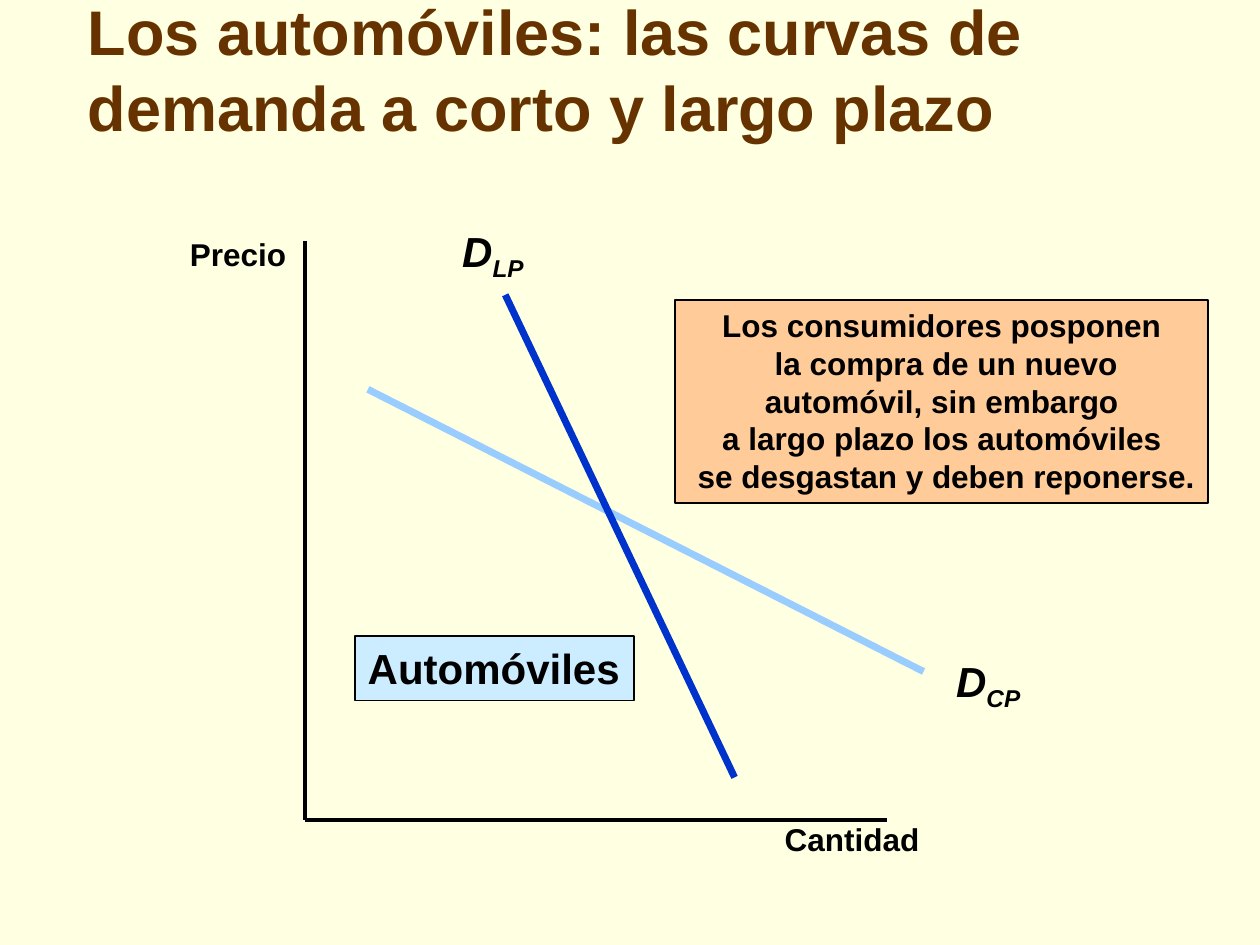
import dataclasses

import lxml.etree
import pptx
import pptx.dml.color
import pptx.enum.shapes
import pptx.enum.text
import pptx.oxml.ns
import pptx.slide
import pptx.util

Inches = pptx.util.Inches
Align = pptx.enum.text.PP_ALIGN
Anchor = pptx.enum.text.MSO_ANCHOR

BLACK = "000000"


@dataclasses.dataclass
class Line:
    start: tuple[float, float]
    end: tuple[float, float]
    color: str
    width: float


@dataclasses.dataclass
class Label:
    place: tuple[float, float, float, float]
    lines: list[str]
    size: float
    subscript: str = ""
    italic: bool = False
    color: str = BLACK
    fill: str = ""
    align: Align = Align.LEFT
    anchor: Anchor = Anchor.TOP
    wrap: bool = False


def rgb(color: str) -> pptx.dml.color.RGBColor:
    return pptx.dml.color.RGBColor.from_string(color)


def draw_line(slide: pptx.slide.Slide, line: Line) -> None:
    points = [Inches(value) for value in (*line.start, *line.end)]
    connector = slide.shapes.add_connector(
        pptx.enum.shapes.MSO_CONNECTOR.STRAIGHT, *points)
    connector.line.color.rgb = rgb(line.color)
    connector.line.width = pptx.util.Pt(line.width)
    properties = connector._element.spPr
    lxml.etree.SubElement(properties, pptx.oxml.ns.qn("a:effectLst"))


def draw_label(slide: pptx.slide.Slide, label: Label) -> None:
    place = [Inches(value) for value in label.place]
    if label.fill:
        box = slide.shapes.add_shape(
            pptx.enum.shapes.MSO_SHAPE.RECTANGLE, *place)
        box.shadow.inherit = False
        box.fill.solid()
        box.fill.fore_color.rgb = rgb(label.fill)
        box.line.color.rgb = rgb(BLACK)
        box.line.width = pptx.util.Pt(1)
    else:
        box = slide.shapes.add_textbox(*place)
    frame = box.text_frame
    frame.word_wrap = label.wrap
    frame.vertical_anchor = label.anchor
    for index, text in enumerate(label.lines):
        para = frame.add_paragraph() if index else frame.paragraphs[0]
        para.alignment = label.align
        for part in filter(None, (text, label.subscript)):
            span = para.add_run()
            span.text = part
            span.font.name = "Arial"
            span.font.size = pptx.util.Pt(label.size)
            span.font.bold = True
            span.font.italic = label.italic
            span.font.color.rgb = rgb(label.color)
            if part == label.subscript:
                span._r.get_or_add_rPr().set("baseline", "-25000")


# Axes meet at the origin; each demand curve is one straight line
ORIGIN = (2.42, 6.51)
LINES = [
    Line((7.33, 5.33), (2.92, 3.09), "99CCFF", 4),
    Line((4.01, 2.34), (5.83, 6.17), "0033CC", 4),
    Line((2.42, 1.91), ORIGIN, BLACK, 2),
    Line(ORIGIN, (7.04, 6.51), BLACK, 2),
]

LABELS = [
    # Title
    Label((0.6, 0.4, 8.73, 0.79),
          ["Los automóviles: las curvas de demanda a corto y largo plazo"],
          36, color="663300", anchor=Anchor.BOTTOM, wrap=True),
    # Curve names
    Label((7.49, 5.15, 0.75, 0.5), ["D"], 24, subscript="CP", italic=True),
    Label((3.57, 1.74, 0.78, 0.5), ["D"], 24, subscript="LP", italic=True),
    # Axis names
    Label((1.32, 1.82, 1.05, 0.4), ["Precio"], 18, align=Align.RIGHT),
    Label((6.13, 6.46, 1.27, 0.4), ["Cantidad"], 18),
    # Filled boxes
    Label((5.36, 2.38, 4.23, 1.61),
          ["Los consumidores posponen",
           " la compra de un nuevo",
           " automóvil, sin embargo ",
           "a largo plazo los automóviles",
           " se desgastan y deben reponerse."],
          18, fill="FFCC99", align=Align.CENTER),
    Label((2.82, 5.05, 2.21, 0.51), ["Automóviles"], 24, fill="CCECFF"),
]


def main() -> None:
    deck = pptx.Presentation()
    deck.slide_width = Inches(10)
    deck.slide_height = Inches(7.5)
    slide = deck.slides.add_slide(deck.slide_layouts[6])
    slide.background.fill.solid()
    slide.background.fill.fore_color.rgb = rgb("FFFFE1")
    for line in LINES:
        draw_line(slide, line)
    for label in LABELS:
        draw_label(slide, label)
    deck.save("out.pptx")


if __name__ == "__main__":
    main()
